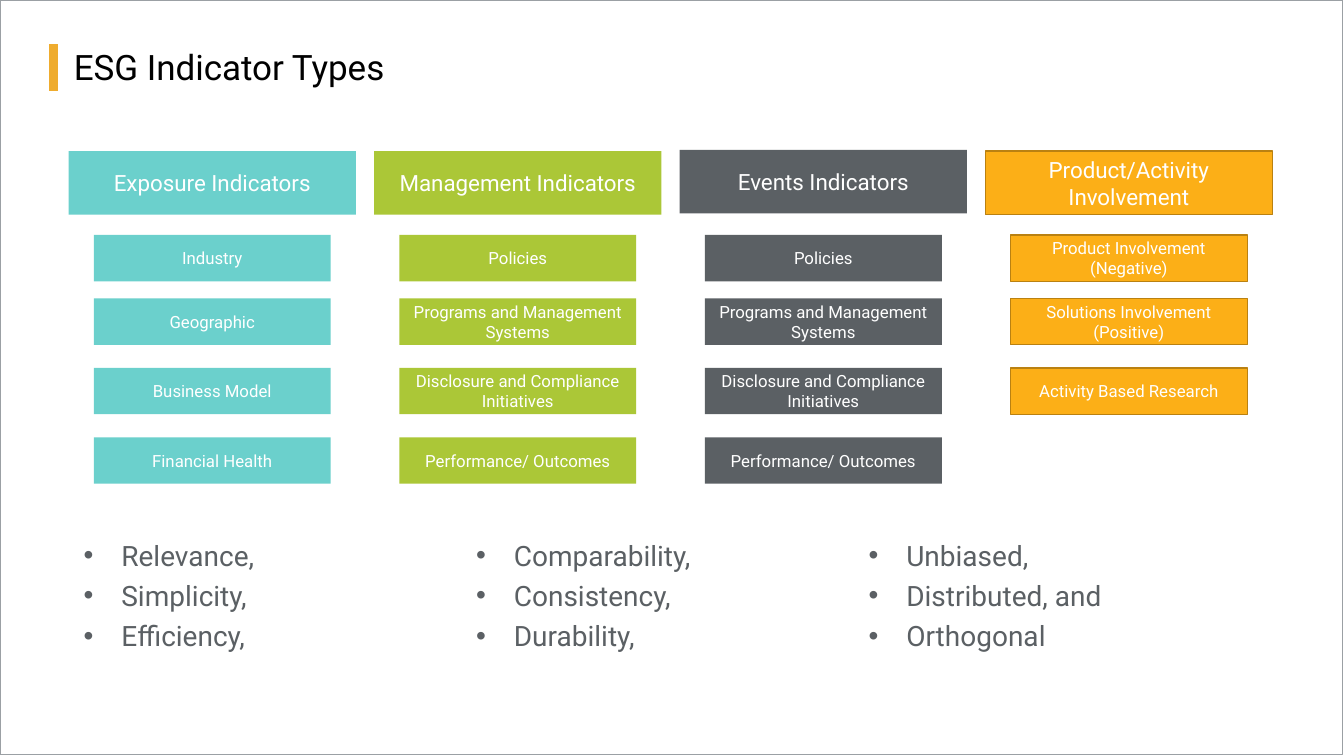
"""Build the ESG indicator types slide."""
from dataclasses import dataclass

from lxml.etree import SubElement
from pptx import Presentation
from pptx.dml.color import RGBColor
from pptx.enum.shapes import MSO_CONNECTOR, MSO_SHAPE
from pptx.enum.text import MSO_ANCHOR, PP_ALIGN
from pptx.oxml.ns import qn
from pptx.shapes.autoshape import Shape
from pptx.slide import Slide
from pptx.text.text import TextFrame, _Paragraph
from pptx.util import Cm, Pt

FONT = "Roboto"
WHITE = "FFFFFF"
GREY = "5B6064"
LEFT, PITCH = 1.73, 7.7
HEADER_W, HEADER_H = 7.24, 1.6
ITEM_W, ITEM_H = 5.97, 1.17
ITEM_TOPS = (5.92, 7.52, 9.27, 11.02)


@dataclass
class Column:
    heading: str
    items: list[str]
    fill: str
    line: str | None = None
    top: float = 3.81


COLUMNS = [
    Column("Exposure Indicators",
           ["Industry", "Geographic", "Business Model", "Financial Health"], "6BD0CC"),
    Column("Management Indicators",
           ["Policies", "Programs and Management Systems",
            "Disclosure and Compliance Initiatives", "Performance/ Outcomes"], "ABC737"),
    Column("Events Indicators",
           ["Policies", "Programs and Management Systems",
            "Disclosure and Compliance Initiatives", "Performance/ Outcomes"], GREY, top=3.78),
    Column("Product/Activity Involvement",
           ["Product Involvement (Negative)", "Solutions Involvement (Positive)",
            "Activity Based Research"], "FCAF17", "BA8111"),
]
QUALITIES = ["Relevance,", "Simplicity,", "Efficiency,", "Comparability,", "Consistency,",
             "Durability,", "Unbiased,", "Distributed, and", "Orthogonal"]


def rgb(value: str) -> RGBColor:
    return RGBColor.from_string(value)


def add_run(p: _Paragraph, text: str, size: float, color: str) -> None:
    r = p.add_run()
    r.text = text
    r.font.name = FONT
    r.font.size = Pt(size)
    r.font.color.rgb = rgb(color)


def add_rect(s: Slide, x: float, y: float, w: float, h: float,
             fill: str | None, line: str | None) -> Shape:
    sp = s.shapes.add_shape(MSO_SHAPE.RECTANGLE, Cm(x), Cm(y), Cm(w), Cm(h))
    sp.shadow.inherit = False
    if fill:
        sp.fill.solid()
        sp.fill.fore_color.rgb = rgb(fill)
    else:
        sp.fill.background()
    if line:
        sp.line.color.rgb = rgb(line)
        sp.line.width = Pt(1)
    else:
        sp.line.fill.background()
    return sp


def add_label(sp: Shape, text: str, size: float) -> None:
    tf = sp.text_frame
    tf.word_wrap = True
    tf.vertical_anchor = MSO_ANCHOR.MIDDLE
    p = tf.paragraphs[0]
    p.alignment = PP_ALIGN.CENTER
    add_run(p, text, size, WHITE)


def add_text_frame(s: Slide, x: float, y: float, w: float, h: float, inset: float) -> TextFrame:
    tf = s.shapes.add_textbox(Cm(x), Cm(y), Cm(w), Cm(h)).text_frame
    tf.word_wrap = True
    tf.margin_left = tf.margin_right = tf.margin_top = tf.margin_bottom = Cm(inset)
    return tf


def add_title(s: Slide, text: str) -> None:
    bar = s.shapes.add_connector(MSO_CONNECTOR.STRAIGHT, Cm(1.35), Cm(1.12), Cm(1.35), Cm(2.29))
    bar.line.color.rgb = rgb("EFAC2E")
    bar.line.width = Pt(6)
    SubElement(bar._element.spPr, qn("a:effectLst"))
    tf = add_text_frame(s, 1.73, 1.17, 30.48, 1.17, 0.13)
    tf.vertical_anchor = MSO_ANCHOR.MIDDLE
    p = tf.paragraphs[0]
    p.line_spacing = 0.9
    add_run(p, text, 25, "000000")


def add_column(s: Slide, column: Column, x: float) -> None:
    header = add_rect(s, x, column.top, HEADER_W, HEADER_H, column.fill, column.line)
    add_label(header, column.heading, 16)
    item_x = x + (HEADER_W - ITEM_W) / 2
    for text, y in zip(column.items, ITEM_TOPS):
        add_label(add_rect(s, item_x, y, ITEM_W, ITEM_H, column.fill, column.line), text, 12)


def add_qualities(s: Slide, qualities: list[str]) -> None:
    tf = add_text_frame(s, 2.11, 13.39, 29.67, 3.63, 0)
    tf._txBody.bodyPr.set("numCol", "3")
    for i, text in enumerate(qualities):
        p = tf.add_paragraph() if i else tf.paragraphs[0]
        pPr = p._p.get_or_add_pPr()
        pPr.set("marL", str(Cm(0.95)))
        pPr.set("indent", str(-Cm(0.95)))
        SubElement(pPr, qn("a:buFont"), typeface="Arial")
        SubElement(pPr, qn("a:buChar"), char="•")
        p.line_spacing = 1.2
        add_run(p, text, 20, GREY)


def main() -> None:
    prs = Presentation()
    prs.slide_width, prs.slide_height = Cm(33.87), Cm(19.05)
    s = prs.slides.add_slide(prs.slide_layouts[6])
    add_rect(s, 0, 0, 33.83, 19.02, None, "9BA0A4")
    add_title(s, "ESG Indicator Types")
    for i, column in enumerate(COLUMNS):
        add_column(s, column, LEFT + i * PITCH)
    add_qualities(s, QUALITIES)
    prs.save("out.pptx")


if __name__ == "__main__":
    main()
